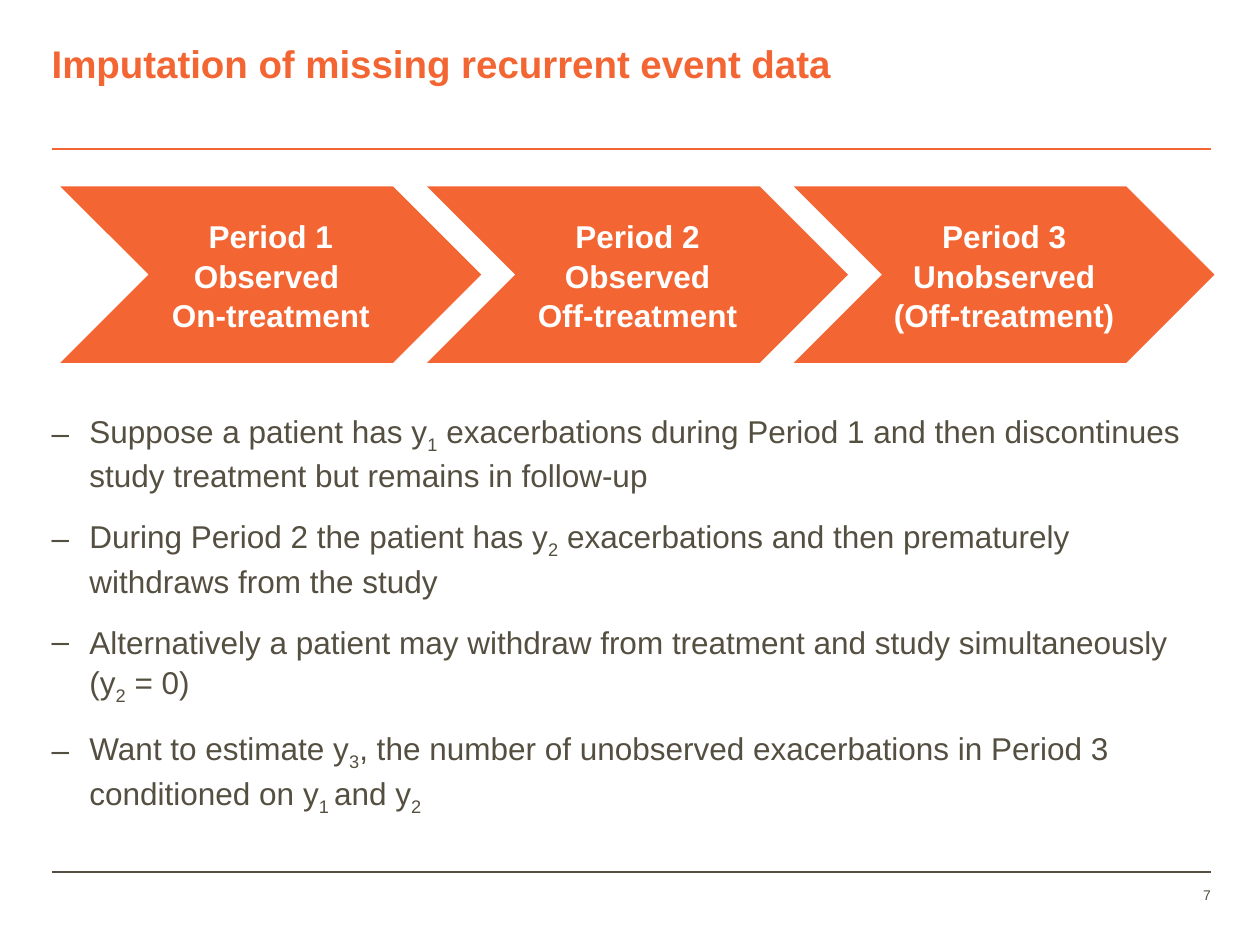
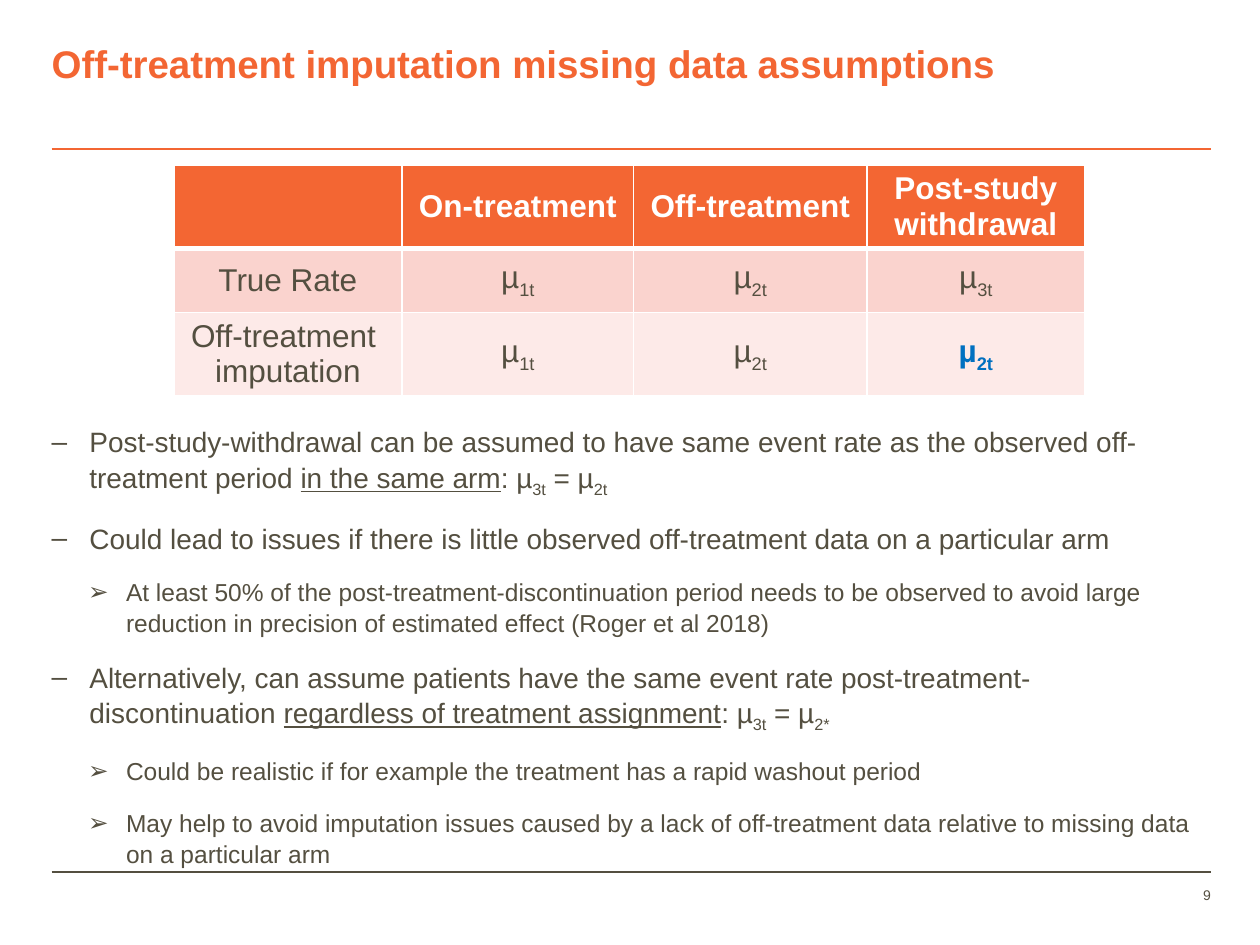
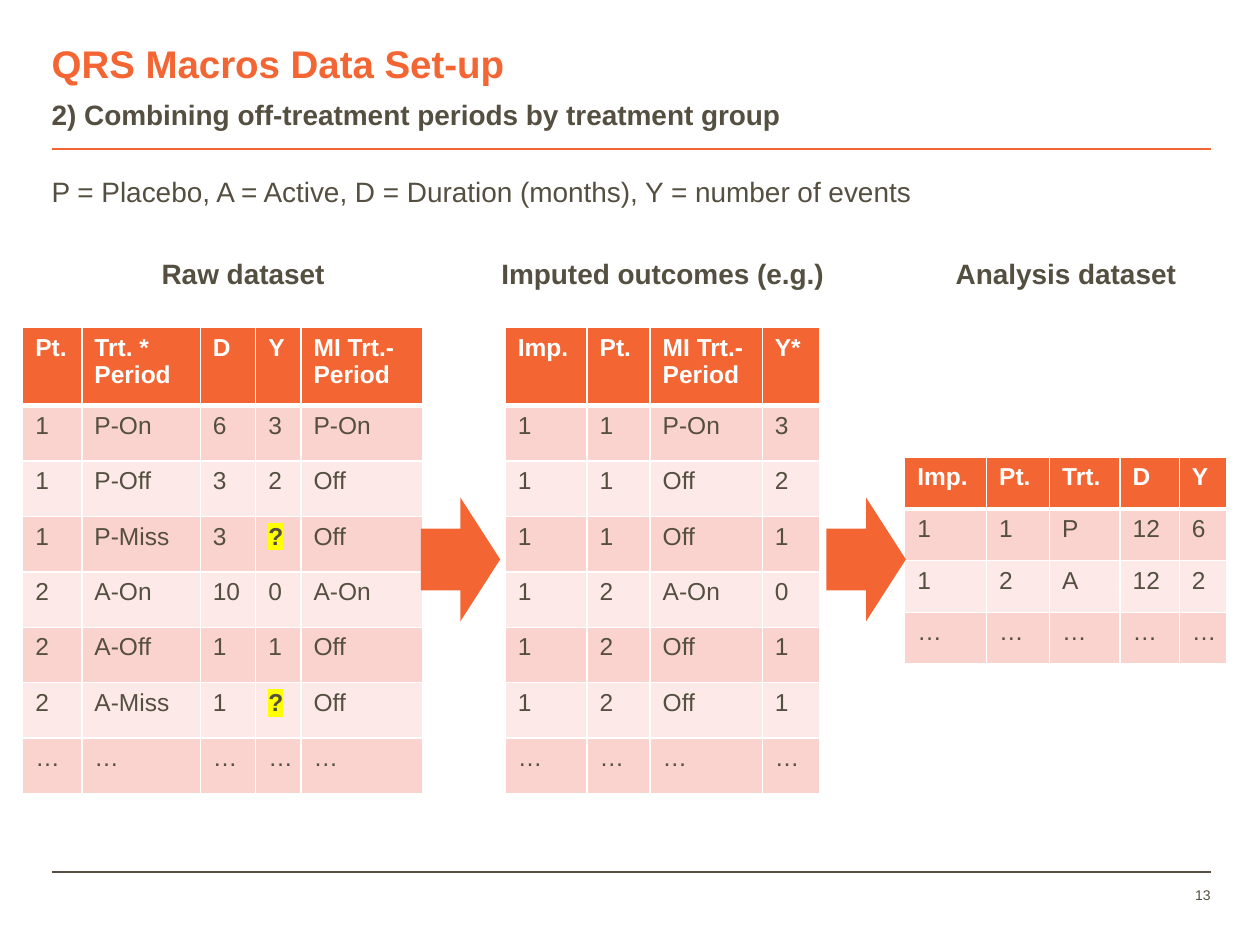
from dataclasses import dataclass

from lxml import etree
from pptx import Presentation
from pptx import util as u
from pptx.dml.color import RGBColor
from pptx.enum import shapes, text
from pptx.oxml import ns


@dataclass(frozen=True)
class Theme:
    font: str = "Arial"
    accent: str = "F36633"
    ink: str = "544F40"
    white: str = "FFFFFF"
    band_dark: str = "FAD3CE"
    band_light: str = "FDEAE8"
    imputed: str = "0070C0"
    highlight: str = "FFFF00"
    title: int = 22
    large: int = 18
    medium: int = 16
    small: int = 14
    footer: int = 8
    left: float = 0.41
    right: float = 9.61
    body_spacing: float = 1.05


T = Theme()
ALIGN, ANCHOR = text.PP_ALIGN, text.MSO_ANCHOR


def write(tf, lines, size, color, bold=False, align=ALIGN.LEFT, spacing=1.0):
    """Fill a text frame; ~x~ marks a subscript and |x| an underline."""
    for n, line in enumerate(lines):
        p = tf.add_paragraph() if n else tf.paragraphs[0]
        p.alignment, p.line_spacing = align, spacing
        p.space_before = p.space_after = u.Pt(0)
        for i, part in enumerate(line.split("|")):
            for j, piece in enumerate(part.split("~")):
                if not piece:
                    continue
                r = p.add_run()
                r.text = piece
                r.font.name, r.font.size, r.font.bold = T.font, u.Pt(size), bold
                r.font.color.rgb = RGBColor.from_string(color)
                if i % 2:
                    r.font.underline = True
                if j % 2:
                    r.font._element.set("baseline", "-25000")


def add_grid(s, left, top, widths, heights, rows, size, align=ALIGN.LEFT, anchor=ANCHOR.TOP):
    """Add a banded table with an accent header and white rules."""
    table = s.shapes.add_table(len(rows), len(widths), u.Inches(left), u.Inches(top),
                               u.Inches(sum(widths)), u.Inches(sum(heights))).table
    for col, width in zip(table.columns, widths):
        col.width = u.Inches(width)
    for i, row in enumerate(rows):
        table.rows[i].height = u.Inches(heights[i])
        for j, value in enumerate(row):
            cell = table.cell(i, j)
            cell.vertical_anchor = anchor
            marked = value == "?"
            write(cell.text_frame, value.split("\n"), size, T.ink if i else T.white,
                  bold=i == 0 or marked, align=align)
            if marked:
                fill = cell.text_frame.paragraphs[0].runs[0].font._element.find(ns.qn("a:solidFill"))
                mark = etree.Element(ns.qn("a:highlight"))
                etree.SubElement(mark, ns.qn("a:srgbClr"), val=T.highlight)
                fill.addnext(mark)
            tcPr = cell._tc.get_or_add_tcPr()
            for side in ("lnL", "lnR", "lnT", "lnB"):
                thick = (side == "lnB" and i == 0) or (side == "lnT" and i == 1)
                ln = etree.SubElement(tcPr, ns.qn("a:" + side), w=str(u.Pt(3 if thick else 1)))
                etree.SubElement(etree.SubElement(ln, ns.qn("a:solidFill")),
                                 ns.qn("a:srgbClr"), val=T.white)
            cell.fill.solid()
            band = T.band_dark if i % 2 else T.band_light
            cell.fill.fore_color.rgb = RGBColor.from_string(band if i else T.accent)
    return table


prs = Presentation()
prs.slide_width, prs.slide_height = u.Inches(10), u.Inches(7.5)

# Titles, page numbers and body text; each body item is (kind, text)
PAGES = [
    ("Imputation of missing recurrent event data", "7", (3.25, 3.22), T.large, [
        ("dash", "Suppose a patient has y~1~ exacerbations during Period 1 and then "
                 "discontinues study treatment but remains in follow-up"),
        ("dash", "During Period 2 the patient has y~2~ exacerbations and then prematurely "
                 "withdraws from the study"),
        ("dash", "Alternatively a patient may withdraw from treatment and study "
                 "simultaneously (y~2~ = 0)"),
        ("dash", "Want to estimate y~3~, the number of unobserved exacerbations in Period 3 "
                 "conditioned on y~1 ~and y~2~"),
    ]),
    ("Off-treatment imputation missing data assumptions", "9", (3.36, 3.02), T.medium, [
        ("dash", "Post-study-withdrawal can be assumed to have same event rate as the observed "
                 "off-treatment period |in the same arm|: µ~3t~ = µ~2t~"),
        ("dash", "Could lead to issues if there is little observed off-treatment data on a "
                 "particular arm"),
        ("arrow", "At least 50% of the post-treatment-discontinuation period needs to be observed "
                  "to avoid large reduction in precision of estimated effect (Roger et al 2018)"),
        ("dash", "Alternatively, can assume patients have the same event rate "
                 "post-treatment-discontinuation |regardless of treatment assignment|: "
                 "µ~3t~ = µ~2*~"),
        ("arrow", "Could be realistic if for example the treatment has a rapid washout period"),
        ("arrow", "May help to avoid imputation issues caused by a lack of off-treatment data "
                  "relative to missing data on a particular arm"),
    ]),
    ("QRS Macros Data Set-up", "13", (0.76, 0.26), T.medium, [
        ("subtitle", "2) Combining off-treatment periods by treatment group"),
    ]),
]
# kind: level, left margin, hanging indent, bullet
KINDS = {"dash": (0, 0.3, -0.3, "–"), "arrow": (1, 0.59, -0.3, "➢"), "subtitle": (0, 0, 0, None)}

# Shared frame: rules, title, body, page number
for title, number, (top, height), size, items in PAGES:
    s = prs.slides.add_slide(prs.slide_layouts[1])
    for y, color in ((6.92, T.ink), (1.18, T.accent)):
        rule = s.shapes.add_connector(shapes.MSO_CONNECTOR.STRAIGHT, u.Inches(T.left), u.Inches(y),
                                      u.Inches(T.right), u.Inches(y))
        rule.line.color.rgb = RGBColor.from_string(color)
        rule.line.width = u.Pt(1)
        etree.SubElement(rule._element.spPr, ns.qn("a:effectLst"))

    body = s.placeholders[1]
    page = s.shapes.add_textbox(0, 0, 0, 0)
    for sp, box in ((s.shapes.title, (T.left, 0.32, 8.28, 0.37)),
                    (body, (T.left, top, T.right - T.left, height)),
                    (page, (8.7, 7.04, 0.91, 0.4))):
        sp.left, sp.top, sp.width, sp.height = map(u.Inches, box)
        tf = sp.text_frame
        tf.margin_left = tf.margin_right = tf.margin_top = tf.margin_bottom = 0
        tf.word_wrap, tf.auto_size = True, text.MSO_AUTO_SIZE.NONE
        tf.vertical_anchor = ANCHOR.TOP
    write(s.shapes.title.text_frame, [title], T.title, T.accent, bold=True)
    write(page.text_frame, [number], T.footer, T.ink, align=ALIGN.RIGHT)

    write(body.text_frame, [line for _, line in items], size, T.ink,
          bold=items[0][0] == "subtitle", spacing=T.body_spacing)
    for n, (p, (kind, _)) in enumerate(zip(body.text_frame.paragraphs, items)):
        p.level, margin, indent, bullet = KINDS[kind]
        p.space_before, p.space_after = u.Pt(6 if n else 0), u.Pt(6)
        pPr = p._p.get_or_add_pPr()
        pPr.set("marL", str(u.Inches(margin)))
        pPr.set("indent", str(u.Inches(indent)))
        if bullet:
            etree.SubElement(pPr, ns.qn("a:buFont"), typeface=T.font)
            etree.SubElement(pPr, ns.qn("a:buChar"), char=bullet)
        else:
            etree.SubElement(pPr, ns.qn("a:buNone"))
        if kind == "arrow":
            for r in p.runs:
                r.font.size = u.Pt(T.small)

periods, assumptions, datasets = prs.slides

# Period chevrons
PERIODS = [
    ["Period 1 Observed ", "On-treatment"],
    ["Period 2", "Observed", "Off-treatment"],
    ["Period 3", "Unobserved", "(Off-treatment)"],
]
for i, lines in enumerate(PERIODS):
    sp = periods.shapes.add_shape(shapes.MSO_SHAPE.CHEVRON, u.Inches(0.48 + 2.91 * i),
                                  u.Inches(1.48), u.Inches(3.34), u.Inches(1.4))
    sp.shadow.inherit = False
    sp.fill.solid()
    sp.fill.fore_color.rgb = RGBColor.from_string(T.accent)
    sp.line.fill.background()
    tf = sp.text_frame
    tf.margin_left = tf.margin_right = tf.margin_top = tf.margin_bottom = u.Inches(0.08)
    tf.word_wrap, tf.vertical_anchor = True, ANCHOR.MIDDLE
    write(tf, lines, T.large, T.white, bold=True, align=ALIGN.CENTER, spacing=T.body_spacing)

# Event rates under the assumption
rates = add_grid(assumptions, 1.38, 1.31, [1.81, 1.84, 1.85, 1.73], [0.66, 0.51, 0.66], [
    ["", "On-treatment", "Off-treatment", "Post-study\nwithdrawal"],
    ["True Rate", "µ~1t~", "µ~2t~", "µ~3t~"],
    ["Off-treatment \nimputation", "µ~1t~", "µ~2t~", "µ~2t~"],
], T.large, ALIGN.CENTER, ANCHOR.MIDDLE)
for r in rates.cell(2, 3).text_frame.paragraphs[0].runs:
    r.font.bold = True
    r.font.color.rgb = RGBColor.from_string(T.imputed)

# Raw, imputed and analysis datasets
tall = [0.62] + [0.44] * 7
add_grid(datasets, 0.18, 2.6, [0.47, 0.94, 0.44, 0.36, 0.97], tall, [
    ["Pt.", "Trt. *\nPeriod", "D", "Y", "MI Trt.-\nPeriod"],
    ["1", "P-On", "6", "3", "P-On"],
    ["1", "P-Off", "3", "2", "Off"],
    ["1", "P-Miss", "3", "?", "Off"],
    ["2", "A-On", "10", "0", "A-On"],
    ["2", "A-Off", "1", "1", "Off"],
    ["2", "A-Miss", "1", "?", "Off"],
    ["…"] * 5,
], T.small)
add_grid(datasets, 4.01, 2.6, [0.65, 0.5, 0.89, 0.46], tall, [
    ["Imp.", "Pt.", "MI Trt.-\nPeriod", "Y*"],
    ["1", "1", "P-On", "3"],
    ["1", "1", "Off", "2"],
    ["1", "1", "Off", "1"],
    ["1", "2", "A-On", "0"],
    ["1", "2", "Off", "1"],
    ["1", "2", "Off", "1"],
    ["…"] * 4,
], T.small)
add_grid(datasets, 7.18, 3.63, [0.65, 0.5, 0.56, 0.47, 0.38], [0.41] * 4, [
    ["Imp.", "Pt.", "Trt.", "D", "Y"],
    ["1", "1", "P", "12", "6"],
    ["1", "2", "A", "12", "2"],
    ["…"] * 5,
], T.small)

# Arrows between the datasets
for x in (3.34, 6.56):
    sp = datasets.shapes.add_shape(shapes.MSO_SHAPE.RIGHT_ARROW, u.Inches(x), u.Inches(3.95),
                                   u.Inches(0.63), u.Inches(0.98))
    sp.shadow.inherit = False
    sp.fill.solid()
    sp.fill.fore_color.rgb = RGBColor.from_string(T.accent)
    sp.line.fill.background()

# Legend and dataset captions
LABELS = [
    ("P = Placebo, A = Active, D = Duration (months), Y = number of events",
     (T.left, 1.37, 9.24, 0.27), False, ALIGN.LEFT),
    ("Raw dataset", (0.43, 2.02, 3, 0.36), True, ALIGN.CENTER),
    ("Imputed outcomes (e.g.)", (3.76, 2.02, 3, 0.36), True, ALIGN.CENTER),
    ("Analysis dataset", (6.96, 2.02, 3, 0.36), True, ALIGN.CENTER),
]
for label, box, bold, align in LABELS:
    tf = datasets.shapes.add_textbox(*map(u.Inches, box)).text_frame
    tf.margin_left = tf.margin_right = tf.margin_top = tf.margin_bottom = 0
    tf.word_wrap = True
    write(tf, [label], T.medium, T.ink, bold, align, T.body_spacing)

prs.save("out.pptx")
